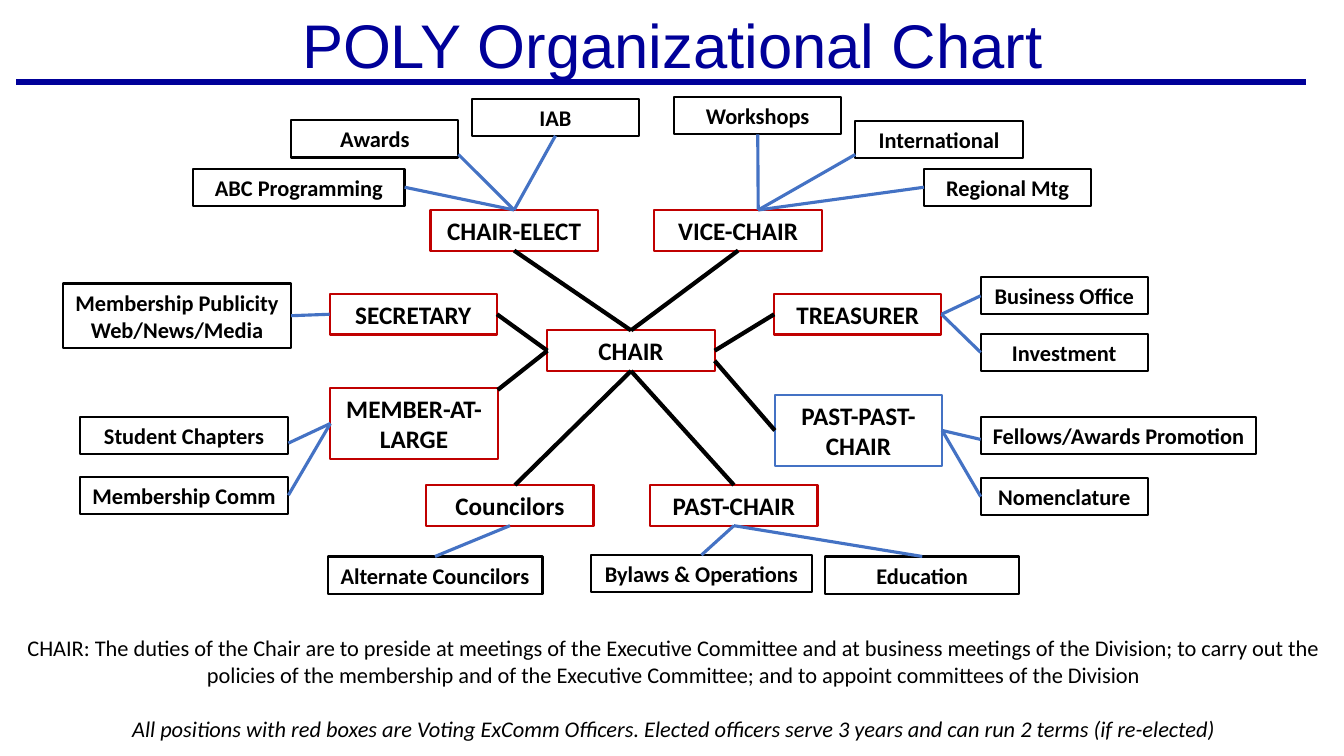
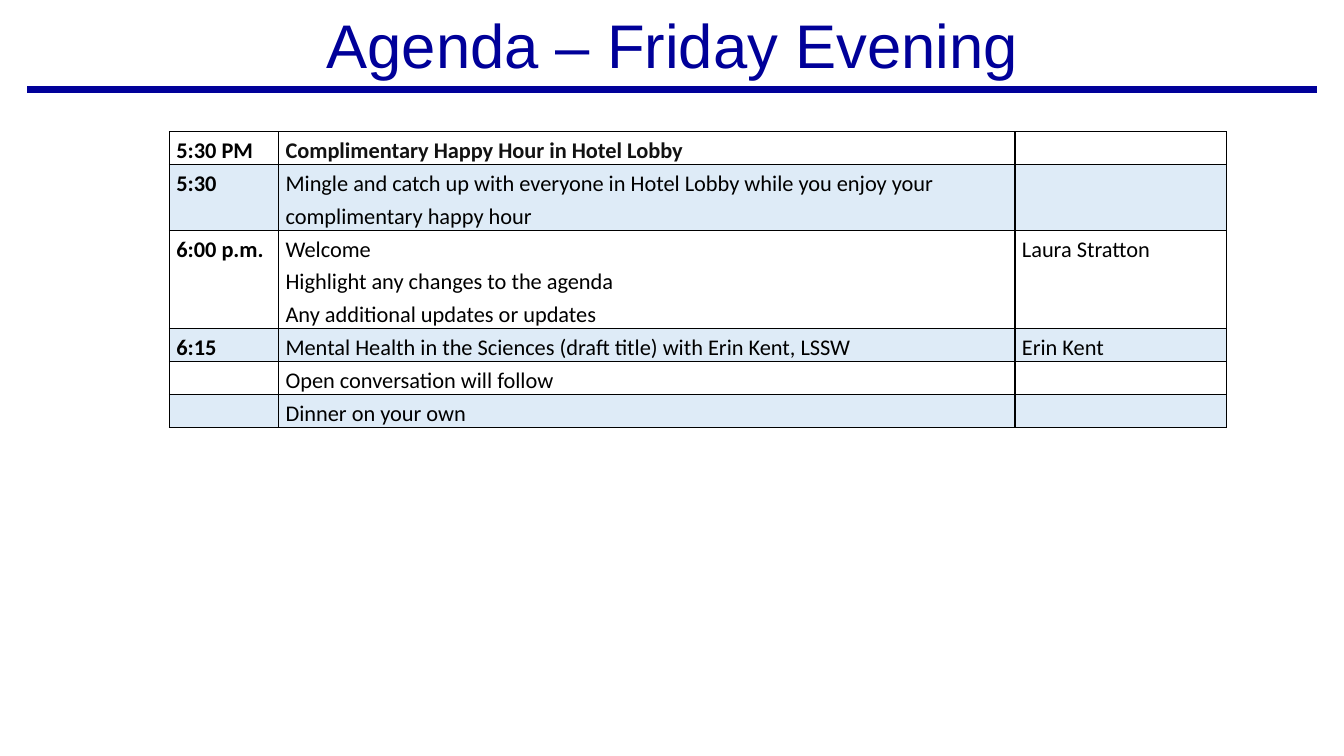
from dataclasses import dataclass
from typing import NamedTuple

from lxml import etree
from pptx import Presentation
from pptx.dml.color import RGBColor
from pptx.enum.shapes import MSO_CONNECTOR, MSO_SHAPE
from pptx.enum.text import MSO_ANCHOR, MSO_AUTO_SIZE, PP_ALIGN
from pptx.oxml.ns import qn
from pptx.util import Pt

STRAIGHT = MSO_CONNECTOR.STRAIGHT
RECTANGLE = MSO_SHAPE.RECTANGLE
MIDDLE = MSO_ANCHOR.MIDDLE
NO_AUTOFIT = MSO_AUTO_SIZE.NONE
CENTER, LEFT_ALIGN = PP_ALIGN.CENTER, PP_ALIGN.LEFT


@dataclass(frozen=True)
class Theme:
    navy: RGBColor = RGBColor(0x00, 0x00, 0x99)
    black: RGBColor = RGBColor(0x00, 0x00, 0x00)
    white: RGBColor = RGBColor(0xFF, 0xFF, 0xFF)
    voting_red: RGBColor = RGBColor(0xC0, 0x00, 0x00)
    blue: RGBColor = RGBColor(0x44, 0x72, 0xC4)
    band: RGBColor = RGBColor(0xDE, 0xEB, 0xF7)
    heading: RGBColor = RGBColor(0x12, 0x12, 0x12)
    title_font: str = "Arial"
    body_font: str = "Calibri"
    title_size: float = 44
    officer_size: float = 18
    body_size: float = 16


THEME = Theme()


class Anchor(NamedTuple):
    """A point of a box, as fractions of its width and height."""
    across: float
    down: float


TOP, LEFT = Anchor(0.5, 0), Anchor(0, 0.5)
BOTTOM, RIGHT = Anchor(0.5, 1), Anchor(1, 0.5)
GLUE_SITES = {TOP: 0, LEFT: 1, BOTTOM: 2, RIGHT: 3}
VICE_CHAIR_FAN = Anchor(0.62, 0)


@dataclass(frozen=True)
class Position:
    """A box of the chart, and how it is joined to the box above it."""
    text: str
    left: float
    top: float
    parent: str = ""
    parent_anchor: Anchor = TOP
    anchor: Anchor = BOTTOM
    width: float = 119.5
    height: float = 26.5
    outline: RGBColor = THEME.black
    text_size: float = THEME.body_size
    link_color: RGBColor = THEME.blue
    link_weight: float = 2.25


@dataclass(frozen=True)
class Officer(Position):
    parent: str = "CHAIR"
    height: float = 29
    outline: RGBColor = THEME.voting_red
    text_size: float = THEME.officer_size
    link_color: RGBColor = THEME.black
    link_weight: float = 3


POSITIONS = (
    Officer("CHAIR", 391, 236, parent=""),
    Officer("CHAIR-ELECT", 307.5, 150),
    Officer("VICE-CHAIR", 467.5, 150),
    Officer("SECRETARY", 235.5, 210, parent_anchor=LEFT, anchor=RIGHT),
    Officer("TREASURER", 553, 210, parent_anchor=RIGHT, anchor=LEFT),
    Officer("MEMBER-AT-LARGE", 236, 277, parent_anchor=LEFT,
            anchor=Anchor(1, 0.03), height=51),
    Officer("PAST-PAST-CHAIR", 553.5, 282, parent_anchor=Anchor(1, 0.75),
            anchor=LEFT, height=51, outline=THEME.blue),
    Officer("Councilors", 304.5, 346.5, parent_anchor=BOTTOM, anchor=Anchor(0.53, 0)),
    Officer("PAST-CHAIR", 464.5, 346.5, parent_anchor=BOTTOM, anchor=TOP),
    Position("IAB", 337, 70.5, "CHAIR-ELECT"),
    Position("Awards", 208, 86, "CHAIR-ELECT", anchor=Anchor(1, 0.92)),
    Position("ABC Programming", 138, 120.5, "CHAIR-ELECT", anchor=RIGHT, width=151),
    Position("Workshops", 481.5, 69.5, "VICE-CHAIR", VICE_CHAIR_FAN),
    Position("International", 611, 86.5, "VICE-CHAIR", VICE_CHAIR_FAN, Anchor(0, 0.9)),
    Position("Regional Mtg", 660, 120.5, "VICE-CHAIR", VICE_CHAIR_FAN, LEFT),
    Position("Membership Publicity\nWeb/News/Media", 45, 202.5, "SECRETARY",
             LEFT, RIGHT, width=163, height=46),
    Position("Business Office", 700.5, 198, "TREASURER", RIGHT, LEFT),
    Position("Investment", 700.5, 238.5, "TREASURER", RIGHT, LEFT),
    Position("Student Chapters", 57, 298, "MEMBER-AT-LARGE",
             LEFT, Anchor(1, 0.7), width=149),
    Position("Membership Comm", 57, 340.5, "MEMBER-AT-LARGE", LEFT, RIGHT, width=149),
    Position("Fellows/Awards Promotion", 700.5, 298, "PAST-PAST-CHAIR",
             RIGHT, Anchor(0, 0.6), width=197),
    Position("Nomenclature", 700.5, 341.5, "PAST-PAST-CHAIR", RIGHT, LEFT),
    Position("Alternate Councilors", 234, 397.5, "Councilors", BOTTOM, TOP, width=153.5),
    Position("Bylaws & Operations", 422, 396.5, "PAST-CHAIR", BOTTOM, TOP, width=158),
    Position("Education", 589.5, 397.5, "PAST-CHAIR", BOTTOM, TOP, width=138.5),
)

CHAIR_DUTIES = (
    "CHAIR: The duties of the Chair are to preside at meetings of the Executive "
    "Committee and at business meetings of the Division; to carry out the policies of "
    "the membership and of the Executive Committee; and to appoint committees of the "
    "Division"
)
VOTING_NOTE = (
    "All positions with red boxes are Voting ExComm Officers. Elected officers serve "
    "3 years and can run 2 terms (if re-elected)"
)


class AgendaItem(NamedTuple):
    time: str
    topic: str
    speaker: str = ""


AGENDA = (
    AgendaItem("5:30 PM", "Complimentary Happy Hour in Hotel Lobby"),
    AgendaItem("5:30", "Mingle and catch up with everyone in Hotel Lobby while you "
                       "enjoy your complimentary happy hour"),
    AgendaItem("6:00 p.m.", "Welcome\nHighlight any changes to the agenda\n"
                            "Any additional updates or updates", "Laura Stratton"),
    AgendaItem("6:15", "Mental Health in the Sciences (draft title) with Erin Kent, LSSW",
               "Erin Kent"),
    AgendaItem("", "Open conversation will follow"),
    AgendaItem("", "Dinner on your own"),
)
AGENDA_WIDTHS = (78, 526, 151)
AGENDA_ROW_HEIGHT = 19.5


def write(frame, text: str, *, size: float = THEME.body_size,
          color: RGBColor = THEME.black, font: str = THEME.body_font,
          bold: bool = False, italic: bool = False, align=CENTER,
          line_spacing: float = 1.0, space_before: float = 0) -> None:
    """Add each line of the text to the frame as a paragraph."""
    for line in text.split("\n"):
        paragraph = frame.add_paragraph() if frame.text else frame.paragraphs[0]
        paragraph.alignment = align
        paragraph.line_spacing = line_spacing
        paragraph.space_before = Pt(space_before)
        run = paragraph.add_run()
        run.text = line
        run.font.name = font
        run.font.size = Pt(size)
        run.font.bold = bold
        run.font.italic = italic
        run.font.color.rgb = color


def add_line(slide, start: tuple, end: tuple, color: RGBColor, weight: float):
    line = slide.shapes.add_connector(STRAIGHT, *(Pt(v) for v in (*start, *end)))
    line.line.color.rgb = color
    line.line.width = Pt(weight)
    etree.SubElement(line._element.spPr, qn("a:effectLst"))
    return line


def add_titled_slide(deck, text: str, rule_left: float, rule_top: float):
    """Add a slide with the shared title style and the rule below it."""
    slide = deck.slides.add_slide(deck.slide_layouts[5])
    title = slide.shapes.title
    title.left, title.top, title.width, title.height = Pt(11.5), Pt(6), Pt(938), Pt(57.5)
    title.text_frame.auto_size = NO_AUTOFIT
    title.text_frame.vertical_anchor = MIDDLE
    write(title.text_frame, text, size=THEME.title_size, color=THEME.navy,
          font=THEME.title_font, line_spacing=0.9)
    add_line(slide, (rule_left, rule_top), (rule_left + 921.5, rule_top), THEME.navy, 4.5)
    return slide


def add_box(slide, position: Position):
    box = slide.shapes.add_shape(RECTANGLE, Pt(position.left), Pt(position.top),
                                 Pt(position.width), Pt(position.height))
    box.shadow.inherit = False
    box.fill.solid()
    box.fill.fore_color.rgb = THEME.white
    box.line.color.rgb = position.outline
    box.line.width = Pt(1.5)
    box.text_frame.word_wrap = True
    box.text_frame.vertical_anchor = MIDDLE
    write(box.text_frame, position.text, size=position.text_size, bold=True)
    return box


def anchor_point(position: Position, anchor: Anchor) -> tuple[float, float]:
    return (position.left + anchor.across * position.width,
            position.top + anchor.down * position.height)


def add_link(slide, parent: Position, child: Position, boxes: dict) -> None:
    """Join two boxes, glued wherever an end lies on a connection site."""
    link = add_line(slide, anchor_point(parent, child.parent_anchor),
                    anchor_point(child, child.anchor),
                    child.link_color, child.link_weight)
    if child.parent_anchor in GLUE_SITES:
        link.begin_connect(boxes[parent.text], GLUE_SITES[child.parent_anchor])
    if child.anchor in GLUE_SITES:
        link.end_connect(boxes[child.text], GLUE_SITES[child.anchor])


def build_chart_slide(deck) -> None:
    slide = add_titled_slide(deck, "POLY Organizational Chart", 11.5, 58.5)
    by_text = {position.text: position for position in POSITIONS}
    boxes = {position.text: add_box(slide, position) for position in POSITIONS}
    for position in POSITIONS:
        if position.parent:
            add_link(slide, by_text[position.parent], position, boxes)

    duties = slide.shapes.add_textbox(Pt(5), Pt(449.5), Pt(952.5), Pt(85)).text_frame
    duties.word_wrap = True
    write(duties, CHAIR_DUTIES)
    write(duties, VOTING_NOTE, italic=True, space_before=19.5)


def format_cell(cell, fill: RGBColor) -> None:
    cell.margin_left = cell.margin_right = Pt(5)
    cell.margin_top = cell.margin_bottom = Pt(0)
    properties = cell._tc.get_or_add_tcPr()
    for edge in ("a:lnL", "a:lnR", "a:lnT", "a:lnB"):
        border = etree.SubElement(properties, qn(edge), w=str(Pt(1)))
        paint = etree.SubElement(border, qn("a:solidFill"))
        etree.SubElement(paint, qn("a:srgbClr"), val=str(THEME.black))
    cell.fill.solid()
    cell.fill.fore_color.rgb = fill


def build_agenda_slide(deck) -> None:
    slide = add_titled_slide(deck, "Agenda – Friday Evening", 19.5, 64)
    agenda = slide.shapes.add_table(
        len(AGENDA), len(AGENDA_WIDTHS), Pt(121), Pt(94),
        Pt(sum(AGENDA_WIDTHS)), Pt(AGENDA_ROW_HEIGHT * len(AGENDA))).table
    agenda.first_row = agenda.horz_banding = False
    for column, width in zip(agenda.columns, AGENDA_WIDTHS):
        column.width = Pt(width)
    for row, item in enumerate(AGENDA):
        for column, text in enumerate(item):
            cell = agenda.cell(row, column)
            format_cell(cell, THEME.band if row % 2 else THEME.white)
            is_heading = row == 0 and column == 1
            if text:
                write(cell.text_frame, text, bold=column == 0 or is_heading,
                      color=THEME.heading if is_heading else THEME.black,
                      align=LEFT_ALIGN, line_spacing=1.2)


def main() -> None:
    deck = Presentation()
    deck.slide_width, deck.slide_height = Pt(960), Pt(540)
    build_chart_slide(deck)
    build_agenda_slide(deck)
    deck.save("out.pptx")


if __name__ == "__main__":
    main()
